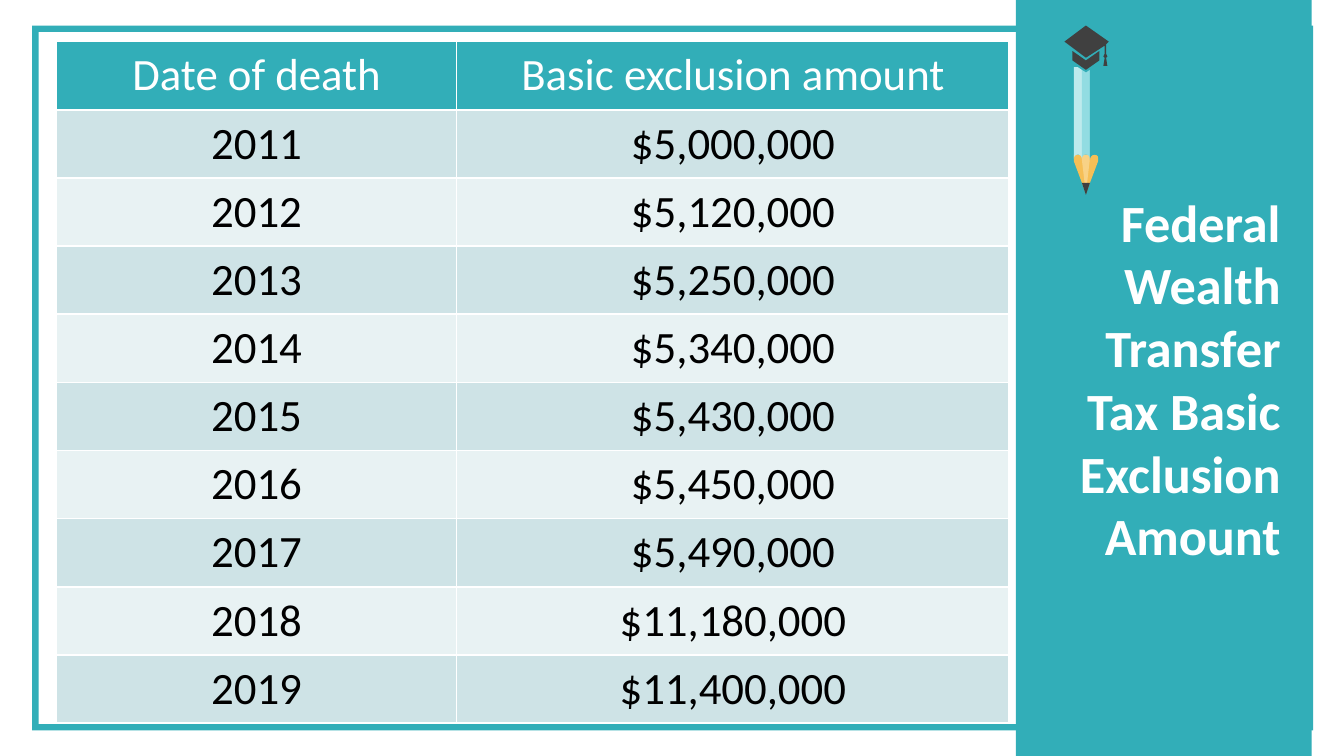
import math

import pptx
import pptx.dml.color
import pptx.enum.shapes
import pptx.enum.text
import pptx.util
from lxml import etree
from pptx.oxml.ns import qn

SHAPE = pptx.enum.shapes.MSO_SHAPE
ALIGN = pptx.enum.text.PP_ALIGN
WIDTH = 10
HEIGHT = WIDTH * 9 / 16
MARGIN = 0.19
TEAL, WHITE, BLACK, CHARCOAL = "32AEB8", "FFFFFF", "000000", "404040"
BANDS = "E8F2F3", "CEE3E6"

EXCLUSIONS = [
    ("Date of death", "Basic exclusion amount"),
    ("2011", "$5,000,000"),
    ("2012", "$5,120,000"),
    ("2013", "$5,250,000"),
    ("2014", "$5,340,000"),
    ("2015", "$5,430,000"),
    ("2016", "$5,450,000"),
    ("2017", "$5,490,000"),
    ("2018", "$11,180,000"),
    ("2019", "$11,400,000"),
]


def color(code):
    return pptx.dml.color.RGBColor.from_string(code)


def inches(*lengths):
    return [pptx.util.Inches(length) for length in lengths]


def paint(shape, code):
    shape.shadow.inherit = False
    shape.fill.solid()
    shape.fill.fore_color.rgb = color(code)
    shape.line.fill.background()
    return shape


def add_block(slide, preset, box, code):
    return paint(slide.shapes.add_shape(preset, *inches(*box)), code)


def write(frame, text, size, code, align, bold=False, before=0):
    paragraph = frame.paragraphs[0]
    paragraph.alignment = align
    paragraph.space_before = pptx.util.Pt(before)
    run = paragraph.add_run()
    run.text = text
    run.font.name = "Calibri"
    run.font.size = pptx.util.Pt(size)
    run.font.bold = bold
    run.font.color.rgb = color(code)


def set_borders(cell):
    properties = cell._tc.get_or_add_tcPr()
    for side in "LRTB":
        line = etree.SubElement(properties, qn(f"a:ln{side}"), w=str(pptx.util.Pt(1)))
        fill = etree.SubElement(line, qn("a:solidFill"))
        etree.SubElement(fill, qn("a:srgbClr"), val=WHITE)


def add_exclusion_table(slide, box):
    table = slide.shapes.add_table(len(EXCLUSIONS), 2, *inches(*box)).table
    for column, share in zip(table.columns, (0.42, 0.58)):
        column.width = pptx.util.Inches(box[2] * share)
    for r, record in enumerate(EXCLUSIONS):
        header = r == 0
        for c, text in enumerate(record):
            cell = table.cell(r, c)
            set_borders(cell)
            cell.fill.solid()
            cell.fill.fore_color.rgb = color(TEAL if header else BANDS[r % 2])
            write(cell.text_frame, text, 24, WHITE if header else BLACK, ALIGN.CENTER)


def add_title_panel(slide, box):
    left, top, width, height = box
    panel = add_block(slide, SHAPE.RECTANGLE, box, TEAL)
    title = slide.shapes.title
    panel.element.addnext(title.element)
    title.left, title.top, title.width, title.height = inches(
        left + 0.08 * width, top + MARGIN, 0.86 * width, height - 2 * MARGIN)
    frame = title.text_frame
    frame.word_wrap = True
    frame.auto_size = pptx.enum.text.MSO_AUTO_SIZE.NONE
    frame.vertical_anchor = pptx.enum.text.MSO_ANCHOR.MIDDLE
    write(frame, "Federal Wealth Transfer Tax Basic Exclusion Amount",
          28, WHITE, ALIGN.RIGHT, bold=True, before=5.6)


def scallop(right, left, base, rise, steps=8):
    """Points of a half ellipse, from its right end over the top to its left."""
    middle, radius = (right + left) / 2, (right - left) / 2
    angles = [math.pi * i / steps for i in range(steps + 1)]
    return [(middle + radius * math.cos(a), base - rise * math.sin(a)) for a in angles]


def add_pencil(slide, box):
    """Pencil with a graduation cap, on a grid 33 units wide and 126 high."""
    left, top, width, height = box

    def place(point):
        return inches(left + point[0] * width / 33, top + point[1] * height / 126)

    def outline(code, *contours):
        builder = slide.shapes.build_freeform(*place(contours[0][0]))
        for i, contour in enumerate(contours):
            if i:
                builder.move_to(*place(contour[0]))
            builder.add_line_segments([place(point) for point in contour[1:]])
        paint(builder.convert_to_shape(), code)

    outline("F6BF56", [(7, 96), (25, 96), (25, 101), (16, 125), (7, 101)])
    outline("F8D286", [(13, 96), (19, 96), (19, 99), (16, 125), (13, 100)])
    outline("BEEAED", [(7, 31), (10, 31), (13, 33), *scallop(13, 7, 99, 3)])
    outline("92DCE2", [(13, 33), (16, 35), (19, 33), *scallop(19, 13, 99, 3)])
    outline(TEAL, [(19, 33), (23, 31), (26, 31), *scallop(26, 19, 100, 4)])

    lead = add_block(slide, SHAPE.ISOSCELES_TRIANGLE,
                     (left + width * 13 / 33, top + height * 117 / 126,
                      width * 6 / 33, height * 9 / 126), CHARCOAL)
    lead.rotation = 180

    cap = [(6, 19), (16, 26), (26, 19), (26, 26), (16, 33), (6, 26)]
    board_and_tassel = [
        (16, 0), (33, 12), (31, 14), (31, 21), (32, 23), (31, 24), (32, 30),
        (29, 30), (30, 24), (29, 23), (30, 21), (30, 15), (16, 24), (0, 12)]
    outline(CHARCOAL, cap, board_and_tassel)


def main():
    deck = pptx.Presentation()
    deck.slide_width, deck.slide_height = inches(WIDTH, HEIGHT)
    slide = deck.slides.add_slide(deck.slide_layouts[5])
    border = add_block(slide, SHAPE.FRAME,
                       (0.24, MARGIN, 9.53, HEIGHT - 2 * MARGIN), TEAL)
    border.adjustments[0] = 0.009
    add_title_panel(slide, (7.56, 0, 0.22 * WIDTH, HEIGHT))
    add_pencil(slide, (7.92, MARGIN, 0.33, 1.26))
    add_exclusion_table(slide, (0.42, 0.31, 7.09, 5))
    deck.save("out.pptx")


if __name__ == "__main__":
    main()
